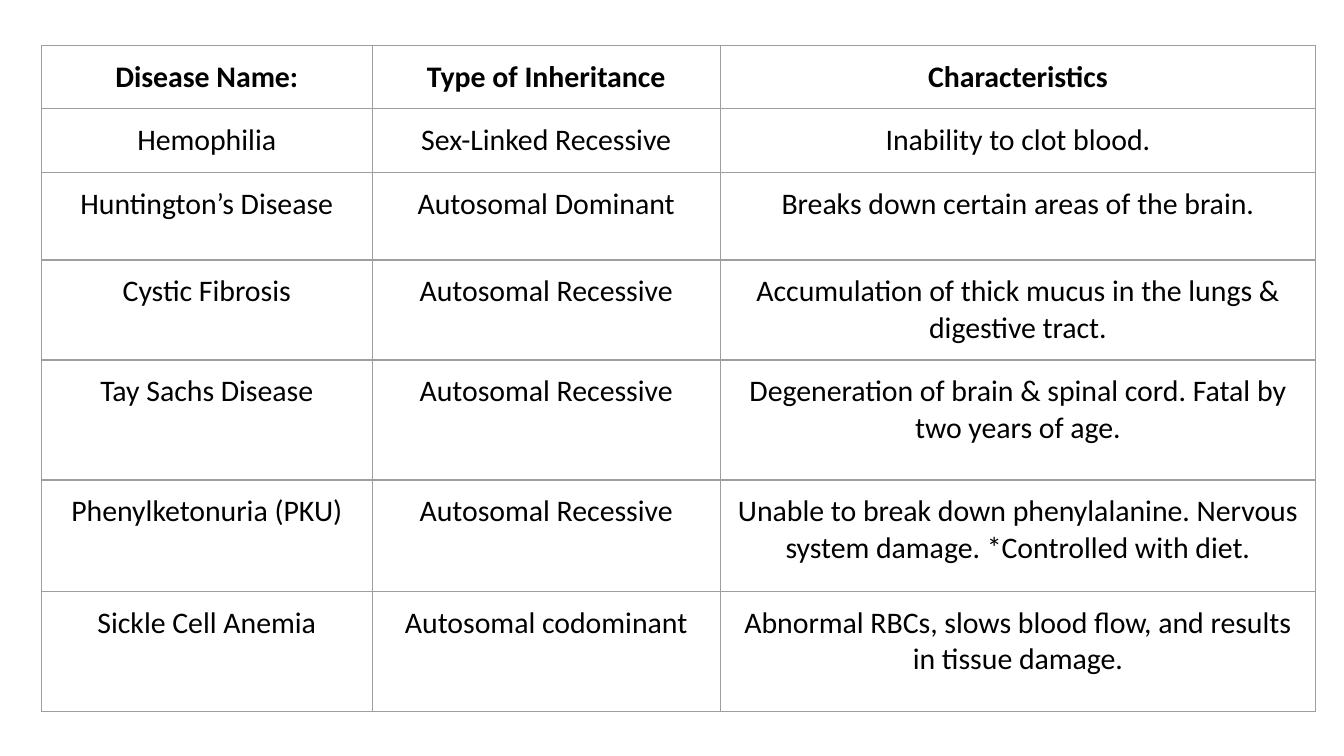
from lxml.etree import SubElement
from pptx import Presentation
from pptx.dml.color import RGBColor
from pptx.enum.text import PP_ALIGN
from pptx.oxml.ns import qn
from pptx.util import Pt

DISEASES = [
    ("Disease Name:", "Type of Inheritance", "Characteristics"),
    ("Hemophilia", "Sex-Linked Recessive", "Inability to clot blood."),
    ("Huntington’s Disease", "Autosomal Dominant",
     "Breaks down certain areas of the brain."),
    ("Cystic Fibrosis", "Autosomal Recessive",
     "Accumulation of thick mucus in the lungs & digestive tract."),
    ("Tay Sachs Disease", "Autosomal Recessive",
     "Degeneration of brain & spinal cord. Fatal by two years of age."),
    ("Phenylketonuria (PKU)", "Autosomal Recessive",
     "Unable to break down phenylalanine. Nervous system damage. "
     "*Controlled with diet."),
    ("Sickle Cell Anemia", "Autosomal codominant",
     "Abnormal RBCs, slows blood flow, and results in tissue damage."),
]
COLUMN_WIDTHS = [177.2, 186.5, 319]
ROW_HEIGHTS = [33.7, 33.7, 47, 53, 64.4, 59.5, 64.4]


def color(hex_code):
    return RGBColor.from_string(hex_code)


def write(frame, text, font="Calibri", size=16, ink="000000", bold=False,
          align=PP_ALIGN.CENTER):
    paragraph = frame.paragraphs[0]
    paragraph.alignment = align
    run = paragraph.add_run()
    run.text = text
    run.font.name = font
    run.font.size = Pt(size)
    run.font.bold = bold
    run.font.color.rgb = color(ink)


class TableSlide:
    border_ink = "9E9E9E"
    border_width = 0.75
    cell_margin = 7.2

    def __init__(self, presentation):
        self.slide = presentation.slides.add_slide(presentation.slide_layouts[6])

    def border(self, cell):
        properties = cell._tc.get_or_add_tcPr()
        for side in ("lnL", "lnR", "lnT", "lnB"):
            line = SubElement(properties, qn(f"a:{side}"),
                              w=str(Pt(self.border_width)))
            fill = SubElement(line, qn("a:solidFill"))
            SubElement(fill, qn("a:srgbClr"), val=self.border_ink)

    def cell(self, cell, text, bold):
        cell.margin_left = cell.margin_right = Pt(self.cell_margin)
        cell.margin_top = cell.margin_bottom = Pt(self.cell_margin)
        self.border(cell)
        cell.fill.background()
        write(cell.text_frame, text, bold=bold)

    def table(self, left, top, rows, widths, heights):
        """Add a bordered table whose first row is bold."""
        table = self.slide.shapes.add_table(
            len(rows), len(widths), Pt(left), Pt(top),
            Pt(sum(widths)), Pt(sum(heights))).table
        table.first_row = table.horz_banding = False
        for column, width in zip(table.columns, widths):
            column.width = Pt(width)
        for row, height, texts in zip(table.rows, heights, rows):
            row.height = Pt(height)
            for cell, text in zip(row.cells, texts):
                self.cell(cell, text, bold=texts is rows[0])


def main():
    presentation = Presentation()
    presentation.slide_width = Pt(720)
    presentation.slide_height = Pt(405)
    TableSlide(presentation).table(22.2, 24.3, DISEASES, COLUMN_WIDTHS, ROW_HEIGHTS)
    presentation.save("out.pptx")


if __name__ == "__main__":
    main()
